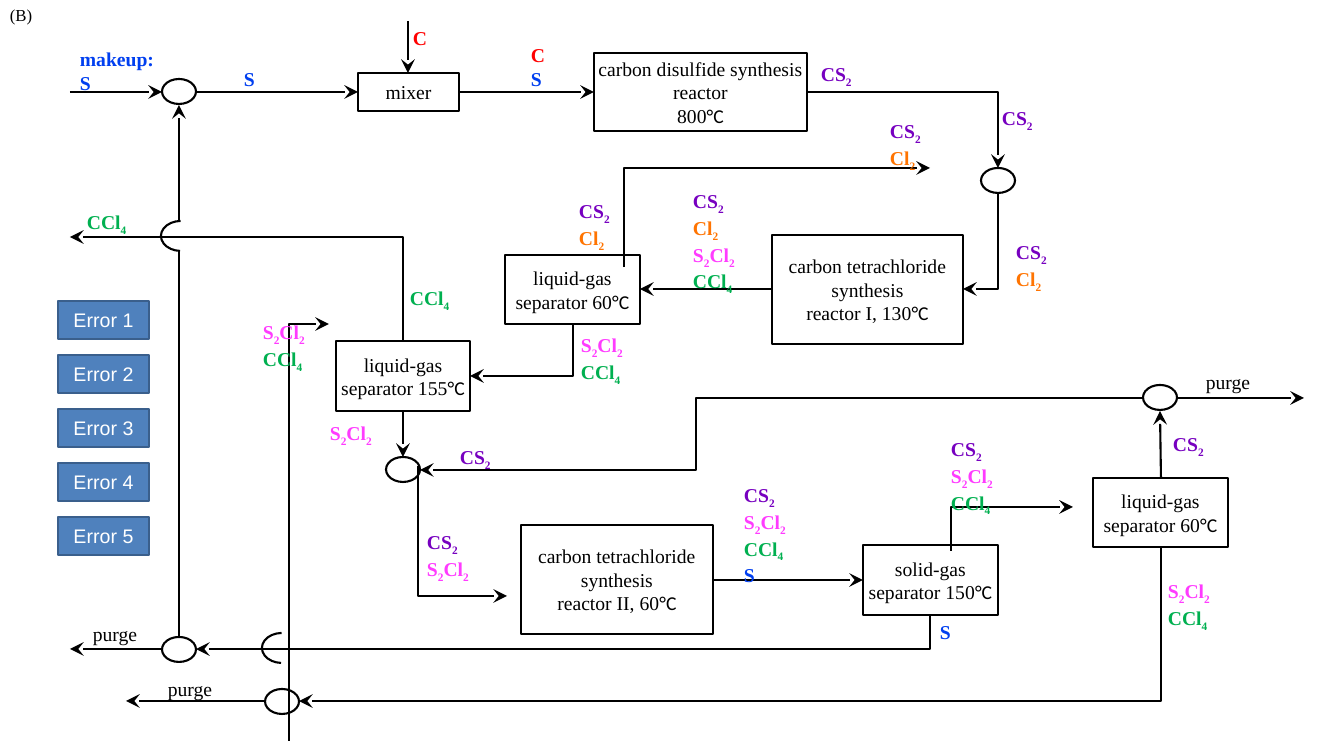
"""Build a flow diagram of carbon tetrachloride synthesis."""
from itertools import groupby
from lxml.etree import SubElement
from pptx import Presentation
from pptx.dml.color import RGBColor
from pptx.enum.shapes import MSO_CONNECTOR, MSO_SHAPE
from pptx.enum.text import MSO_ANCHOR, PP_ALIGN
from pptx.oxml.ns import qn
from pptx.util import Pt

WIDE, HIGH = 1344, 756
SCALE = 12192000 / WIDE
BLACK, WHITE = "000000", "FFFFFF"
SERIF = {"name": "Times New Roman", "size": Pt(14)}
BOLD = SERIF | {"bold": True}
DEGREE = SERIF | {"name": "Calibri"}
SANS = SERIF | {"name": "Arial"}
TIGHT = dict.fromkeys(
    ("margin_left", "margin_top", "margin_right", "margin_bottom"), 0)
MIDDLE = {"word_wrap": True, "vertical_anchor": MSO_ANCHOR.MIDDLE}

COLORS = {"makeup:": "003FF0", "S": "003FF0", "C": "FF0000",
          "CS2": "7700C0", "Cl2": "FF7401", "S2Cl2": "FF3BFF",
          "CCl4": "00B050", "purge": BLACK}

UNITS = [
    (358, 73, 101, 38, ["mixer"]),
    (594, 53, 213, 78, ["carbon disulfide synthesis reactor", "800°C"]),
    (772, 235, 191, 109,
     ["carbon tetrachloride synthesis", "reactor I, 130°C"]),
    (505, 255, 135, 69, ["liquid-gas separator 60°C"]),
    (336, 341, 134, 70, ["liquid-gas separator 155°C"]),
    (521, 525, 192, 109,
     ["carbon tetrachloride synthesis", "reactor II, 60°C"]),
    (863, 545, 135, 70, ["solid-gas separator 150°C"]),
    (1093, 478, 135, 69, ["liquid-gas separator 60°C"]),
]
NODES = [(162, 79), (981, 168), (1143, 385), (386, 457), (162, 637),
         (265, 689)]
NODE = (34, 25)
FLOWS = [
    [(70, 92), (162, 92)],
    [(196, 92), (358, 92)],
    [(459, 92), (594, 92)],
    [(179, 637), (179, 105)],
    [(807, 92), (998, 92), (998, 168)],
    [(998, 193), (998, 289), (963, 289)],
    [(624, 267), (624, 168), (930, 168)],
    [(573, 324), (573, 376), (470, 376)],
    [(289, 741), (289, 324), (329, 324)],
    [(418, 466), (418, 596), (507, 596)],
    [(1143, 398), (696, 398), (696, 470), (420, 470)],
    [(951, 551), (951, 507), (1073, 507)],
    [(1161, 547), (1161, 701), (299, 701)],
    [(772, 289), (640, 289)],
    [(408, 21), (408, 73)],
    [(403, 411), (403, 457)],
    [(1161, 478), (1160, 411)],
    [(162, 649), (70, 649)],
    [(265, 701), (126, 701)],
    [(713, 580), (863, 580)],
    [(1177, 398), (1304, 398)],
]
GAPS = [[(181, 221), (180, 251)], [(283, 633), (282, 663)]]
OVERS = [
    [(403, 341), (403, 237), (70, 237)],
    [(930, 615), (930, 649), (196, 649)],
]
ARCS = [(161, 221), (262, 633)]
ARC = (40, 30)
LABELS = [
    (70, 42, "makeup: S"), (234, 62, "S"), (521, 38, "C S"), (403, 21, "C"),
    (811, 57, "CS2"), (992, 101, "CS2"), (1006, 235, "CS2 Cl2"),
    (880, 114, "CS2 Cl2"), (569, 194, "CS2 Cl2"),
    (683, 184, "CS2 Cl2 S2Cl2 CCl4"), (571, 328, "S2Cl2 CCl4"),
    (253, 315, "S2Cl2 CCl4"), (400, 281, "CCl4"), (77, 205, "CCl4"),
    (320, 416, "S2Cl2"), (450, 440, "CS2"), (417, 525, "CS2 S2Cl2"),
    (734, 478, "CS2 S2Cl2 CCl4 S"), (941, 432, "CS2 S2Cl2 CCl4"),
    (930, 615, "S"), (1158, 574, "S2Cl2 CCl4"), (1163, 427, "CS2"),
    (1196, 365, "purge"), (158, 672, "purge"), (83, 617, "purge"),
]
ERRORS = [f"Error {n}" for n in range(1, 6)]


def px(*sizes):
    return [round(size * SCALE) for size in sizes]


def paint(font, tone):
    font.color.rgb = RGBColor.from_string(tone)


def put(item, form):
    for name, value in form.items():
        setattr(item, name, value)


def write(para, text, form, tone):
    run = para.add_run()
    run.text = text
    put(run.font, form)
    paint(run.font, tone)
    return run


def lines(frame, texts):
    for i, text in enumerate(texts):
        yield (frame.add_paragraph() if i else frame.paragraphs[0]), text


def shape(kind, *place, fill=None, edge=BLACK, width=1.5):
    item = slide.shapes.add_shape(kind, *px(*place))
    item.shadow.inherit = False
    if fill:
        item.fill.solid()
        item.fill.fore_color.rgb = RGBColor.from_string(fill)
    else:
        item.fill.background()
    item.line.width = Pt(width)
    paint(item.line, edge)
    return item


def link(start, end, kind=MSO_CONNECTOR.STRAIGHT, tone=BLACK, width=1.5):
    item = slide.shapes.add_connector(kind, *px(*start, *end))
    item.line.width = Pt(width)
    paint(item.line, tone)
    props = item._element.spPr
    SubElement(props, qn("a:effectLst"))
    return props


def bend(points):
    (ax, ay), (bx, by), (cx, cy) = points
    if ay == by:
        props = link(points[0], points[-1], MSO_CONNECTOR.ELBOW)
    else:
        left, down = cx < ax, cy > ay
        midx, midy = (ax + cx) / 2, (ay + cy) / 2
        halfx, halfy = abs(cy - ay) / 2, abs(cx - ax) / 2
        if left != down:
            halfx = -halfx
        props = link((midx - halfx, midy - halfy),
                     (midx + halfx, midy + halfy), MSO_CONNECTOR.ELBOW)
        turn = 90 if left else 270
        props.find(qn("a:xfrm")).set("rot", str(turn * 60000))
    props.find(qn("a:prstGeom")).set("prst", "bentConnector2")
    return props


def step(points):
    start, knee, _, end = points
    props = link(start, end, MSO_CONNECTOR.ELBOW)
    part = (knee[0] - start[0]) / (end[0] - start[0])
    guides = props.find(qn("a:prstGeom")).find(qn("a:avLst"))
    SubElement(guides, qn("a:gd"), name="adj1",
               fmla=f"val {round(part * 100000)}")
    return props


def flow(points):
    if len(points) == 2:
        props = link(*points)
    else:
        props = bend(points) if len(points) == 3 else step(points)
    SubElement(props.find(qn("a:ln")), qn("a:tailEnd"), type="stealth",
               w="lg", len="lg")


def box(x, y, wide, high):
    frame = slide.shapes.add_textbox(*px(x, y, wide, high)).text_frame
    frame.word_wrap = True
    return frame


def unit(x, y, wide, high, texts):
    frame = shape(MSO_SHAPE.RECTANGLE, x, y, wide, high).text_frame
    put(frame, TIGHT | MIDDLE)
    for para, text in lines(frame, texts):
        para.alignment = PP_ALIGN.CENTER
        head, mark, _ = text.partition("°C")
        write(para, head, SERIF, BLACK)
        if mark:
            write(para, mark, DEGREE, BLACK)


def label(x, y, text):
    names = text.split()
    wide = 127 if "makeup:" in names else 90
    frame = box(x, y, wide, 10 + 24 * len(names))
    for para, name in lines(frame, names):
        form = SERIF if name == "purge" else BOLD
        for low, part in groupby(name, str.isdigit):
            run = write(para, "".join(part), form, COLORS[name])
            if low:
                run._r.get_or_add_rPr().set("baseline", "-25000")


def button(row, text):
    item = shape(MSO_SHAPE.ACTION_BUTTON_CUSTOM, 58, 301 + 54 * row, 91, 38,
                 fill="4F81BD", edge="3A5F8C", width=2)
    put(item.text_frame, MIDDLE)
    para = item.text_frame.paragraphs[0]
    para.alignment = PP_ALIGN.CENTER
    write(para, text, SANS, WHITE)


deck = Presentation()
deck.slide_width, deck.slide_height = px(WIDE, HIGH)
slide = deck.slides.add_slide(deck.slide_layouts[6])
for entry in UNITS:
    unit(*entry)
for spot in NODES:
    shape(MSO_SHAPE.OVAL, *spot, *NODE)
for points in FLOWS:
    flow(points)
for entry in LABELS:
    label(*entry)
for gap, over, spot in zip(GAPS, OVERS, ARCS):
    link(*gap, tone=WHITE, width=4.5)
    flow(over)
    arc = shape(MSO_SHAPE.ARC, *spot, *ARC)
    arc.adjustments[0], arc.adjustments[1] = 56.03, 161.14
write(box(0, 0, 57, 30).paragraphs[0], "(B)", SERIF | {"size": Pt(12)}, BLACK)
for row, text in enumerate(ERRORS):
    button(row, text)
deck.save("out.pptx")
